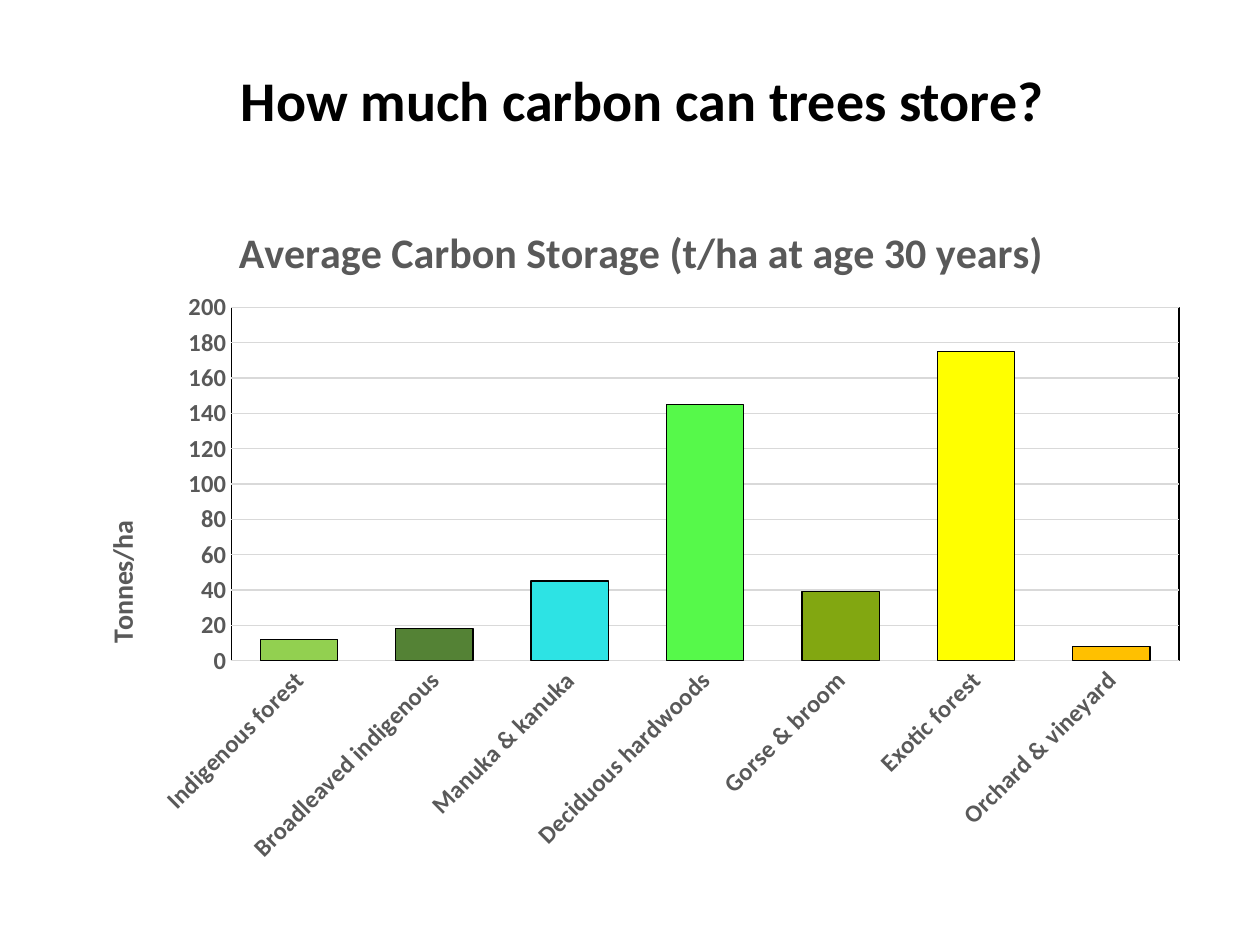
from lxml.etree import SubElement
from pptx import Presentation
from pptx.chart.data import CategoryChartData
from pptx.dml.color import RGBColor
from pptx.enum.chart import XL_CHART_TYPE, XL_TICK_MARK
from pptx.enum.text import MSO_ANCHOR, PP_ALIGN
from pptx.oxml import parse_xml
from pptx.oxml.ns import nsdecls, qn
from pptx.util import Inches, Pt

FONT = "Calibri"
COLORS = {"black": "000000", "gray": "595959", "grid": "D9D9D9", "series": "4472C4"}
STORAGE = [
    ("Indigenous forest", 12, "92D050"),
    ("Broadleaved indigenous", 18, "548235"),
    ("Manuka & kanuka", 45, "2DE3E4"),
    ("Deciduous hardwoods", 145, "56F94A"),
    ("Gorse & broom", 39, "82A711"),
    ("Exotic forest", 175, "FFFF00"),
    ("Orchard & vineyard", 8, "FFC000"),
]


def rgb(name):
    return RGBColor.from_string(COLORS.get(name, name))


def share_box(prs, x, y, w, h):
    return (int(prs.slide_width * x), int(prs.slide_height * y),
            int(prs.slide_width * w), int(prs.slide_height * h))


def style_font(font, size, color="gray", bold=True):
    font.name = FONT
    font.size = Pt(size)
    font.bold = bold
    font.color.rgb = rgb(color)


def style_line(line, color):
    line.color.rgb = rgb(color)
    line.width = Pt(0.75)


def place(element, **shares):
    old = element.find(qn("c:layout"))
    if old is not None:
        element.remove(old)
    layout = parse_xml(f"<c:layout {nsdecls('c')}><c:manualLayout/></c:layout>")
    manual = layout[0]
    if "w" in shares:
        SubElement(manual, qn("c:layoutTarget")).set("val", "inner")
    for key in ("xMode", "yMode"):
        SubElement(manual, qn(f"c:{key}")).set("val", "edge")
    for key, share in shares.items():
        SubElement(manual, qn(f"c:{key}")).set("val", str(share))
    tx = element.find(qn("c:tx"))
    element.insert(0 if tx is None else 1, layout)


def set_caption(caption, text, size, x, y):
    tf = caption.text_frame
    tf.text = text
    style_font(tf.paragraphs[0].runs[0].font, size)
    place(caption._element, x=x, y=y)


def add_title(prs, slide, text):
    sp = slide.shapes.title
    sp.left, sp.top, sp.width, sp.height = share_box(prs, 0.09, 0.06, 0.84, 0.09)
    tf = sp.text_frame
    tf.text = text
    tf.vertical_anchor = MSO_ANCHOR.MIDDLE
    p = tf.paragraphs[0]
    p.alignment = PP_ALIGN.CENTER
    style_font(p.runs[0].font, 32, "black")


def style_axis(axis):
    axis.major_tick_mark = axis.minor_tick_mark = XL_TICK_MARK.NONE
    style_font(axis.tick_labels.font, 14)


def style_axes(chart):
    cat, val = chart.category_axis, chart.value_axis
    style_axis(cat)
    style_line(cat.format.line, "grid")
    cat._element.find(qn("c:txPr")).find(qn("a:bodyPr")).set("rot", "-2700000")

    style_axis(val)
    val.minimum_scale, val.maximum_scale, val.major_unit = 0, 200, 20
    val.tick_labels.number_format = "0"
    val.tick_labels.number_format_is_linked = False
    val.format.line.fill.background()
    style_line(val.major_gridlines.format.line, "grid")
    set_caption(val.axis_title, "Tonnes/ha", 16, 0.03, 0.48)
    body = val.axis_title.text_frame._txBody.find(qn("a:bodyPr"))
    body.set("rot", "-5400000")
    body.set("vert", "horz")


def style_bars(plot):
    plot.gap_width = 75
    plot.overlap = -27
    plot.vary_by_categories = False
    series = plot.series[0]
    series.format.fill.solid()
    series.format.fill.fore_color.rgb = rgb("series")
    style_line(series.format.line, "black")
    for i, (_, _, color) in enumerate(STORAGE):
        bar = series.points[i].format
        bar.fill.solid()
        bar.fill.fore_color.rgb = rgb(color)
        style_line(bar.line, "black")


def frame_plot(chart):
    area = chart._chartSpace.chart.plotArea
    place(area, x=0.147, y=0.181, w=0.834, h=0.507)
    area.append(parse_xml(
        f"<c:spPr {nsdecls('c', 'a')}><a:noFill/><a:ln w=\"9525\"><a:solidFill>"
        f"<a:srgbClr val=\"{COLORS['black']}\"/></a:solidFill></a:ln></c:spPr>"))


def add_storage_chart(prs, slide):
    data = CategoryChartData()
    data.categories = [name for name, _, _ in STORAGE]
    data.add_series("Series 1", [tonnes for _, tonnes, _ in STORAGE])
    box = share_box(prs, 0.051, 0.192, 0.902, 0.737)
    chart = slide.shapes.add_chart(XL_CHART_TYPE.COLUMN_CLUSTERED, *box, data).chart
    style_font(chart.font, 10, "black", False)
    chart.has_legend = False
    set_caption(chart.chart_title, "Average Carbon Storage (t/ha at age 30 years)",
                24, 0.147, 0.05)
    style_axes(chart)
    style_bars(chart.plots[0])
    frame_plot(chart)


def main():
    prs = Presentation()
    prs.slide_width, prs.slide_height = Inches(10), Inches(7.5)
    slide = prs.slides.add_slide(prs.slide_layouts[5])
    add_title(prs, slide, "How much carbon can trees store?")
    add_storage_chart(prs, slide)
    prs.save("out.pptx")


if __name__ == "__main__":
    main()
